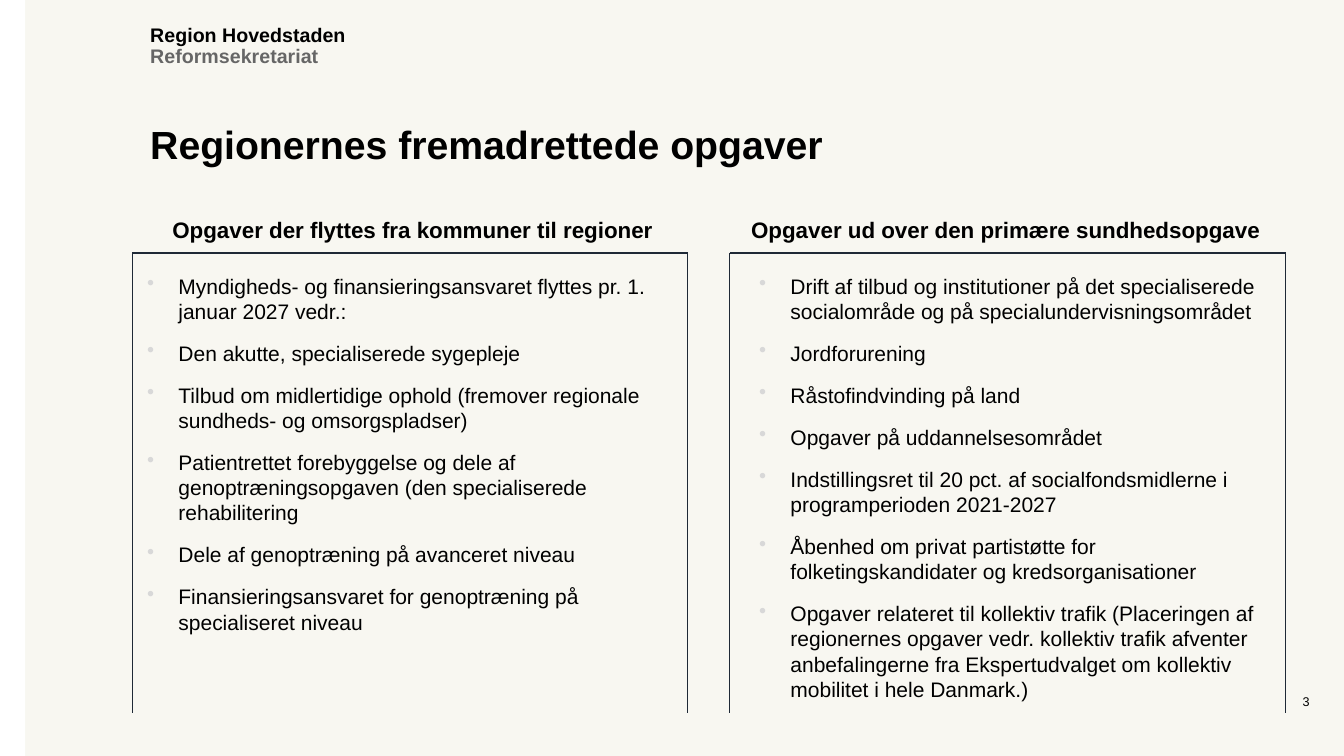
from dataclasses import dataclass

from lxml.etree import SubElement
from pptx import Presentation
from pptx.dml.color import RGBColor
from pptx.enum.shapes import MSO_CONNECTOR, MSO_SHAPE
from pptx.enum.text import MSO_ANCHOR, MSO_AUTO_SIZE, PP_ALIGN
from pptx.oxml.ns import qn
from pptx.util import Inches, Pt


@dataclass(frozen=True)
class Theme:
    font: str = "Arial"
    background: str = "F8F7F1"
    bar: str = "FFFFFF"
    text: str = "000000"
    muted: str = "666666"
    bullet: str = "D8D8D8"
    rule: str = "1F2936"
    title_size: float = 28
    heading_size: float = 16
    body_size: float = 15
    body_leading: float = 18
    header_size: float = 14
    number_size: float = 9


THEME = Theme()

MOVED_TASKS = [
    "Myndigheds- og finansieringsansvaret flyttes pr. 1. januar 2027 vedr.:",
    "Den akutte, specialiserede sygepleje",
    "Tilbud om midlertidige ophold (fremover regionale sundheds- og omsorgspladser)",
    "Patientrettet forebyggelse og dele af genoptræningsopgaven "
    "(den specialiserede rehabilitering",
    "Dele af genoptræning på avanceret niveau",
    "Finansieringsansvaret for genoptræning på specialiseret niveau",
]
OTHER_TASKS = [
    "Drift af tilbud og institutioner på det specialiserede socialområde "
    "og på specialundervisningsområdet",
    "Jordforurening",
    "Råstofindvinding på land",
    "Opgaver på uddannelsesområdet",
    "Indstillingsret til 20 pct. af socialfondsmidlerne i programperioden 2021-2027",
    "Åbenhed om privat partistøtte for folketingskandidater og kredsorganisationer",
    "Opgaver relateret til kollektiv trafik (Placeringen af regionernes opgaver "
    "vedr. kollektiv trafik afventer anbefalingerne fra Ekspertudvalget om "
    "kollektiv mobilitet i hele Danmark.)",
]


def color(value):
    return RGBColor.from_string(value)


def format_para(para, size, tone=THEME.text, bold=False):
    para.font.name = THEME.font
    para.font.size = Pt(size)
    para.font.bold = bold
    para.font.color.rgb = color(tone)


def clear_margins(frame):
    frame.margin_left = frame.margin_right = 0
    frame.margin_top = frame.margin_bottom = 0
    frame.word_wrap = True
    frame.auto_size = MSO_AUTO_SIZE.NONE


def add_text_frame(page, left, top, width, height):
    box = page.shapes.add_textbox(*map(Inches, (left, top, width, height)))
    clear_margins(box.text_frame)
    return box.text_frame


def add_label(page, text, left, top, width, height, size, **style):
    para = add_text_frame(page, left, top, width, height).paragraphs[0]
    para.text = text
    format_para(para, size, **style)
    return para


def add_bullet(para):
    properties = para._p.get_or_add_pPr()
    indent = Inches(0.31)
    properties.set("marL", str(indent))
    properties.set("indent", str(-indent))
    tint = SubElement(properties, qn("a:buClr"))
    SubElement(tint, qn("a:srgbClr"), val=THEME.bullet)
    SubElement(properties, qn("a:buChar"), char="•")


def add_rule(page, start, end):
    rule = page.shapes.add_connector(
        MSO_CONNECTOR.STRAIGHT, *map(Inches, (*start, *end)))
    rule.line.color.rgb = color(THEME.rule)
    rule.line.width = Pt(0.75)
    SubElement(rule._element.spPr, qn("a:effectLst"))


def add_open_frame(page, left, top, width, height):
    """Draw the top and the two sides of a box, leaving its foot open."""
    right, bottom = left + width, top + height
    add_rule(page, (left, top), (right, top))
    for side in (left, right):
        add_rule(page, (side, top), (side, bottom))


def add_task_column(page, box, heading, tasks, heading_inset, list_inset, list_width):
    left, top, width, height = box
    add_label(page, heading, left + heading_inset, top - 0.37,
              width - heading_inset, 0.31, THEME.heading_size, bold=True)
    add_open_frame(page, *box)
    frame = add_text_frame(page, left + list_inset, top + 0.2, list_width, height)
    for index, task in enumerate(tasks):
        para = frame.add_paragraph() if index else frame.paragraphs[0]
        para.text = task
        add_bullet(para)
        para.line_spacing = Pt(THEME.body_leading)
        para.space_after = Pt(12)
        format_para(para, THEME.body_size)


def add_side_bar(page, left, top, width, height):
    bar = page.shapes.add_shape(
        MSO_SHAPE.RECTANGLE, *map(Inches, (left, top, width, height)))
    bar.shadow.inherit = False
    bar.fill.solid()
    bar.fill.fore_color.rgb = color(THEME.bar)
    bar.line.fill.background()


def add_sender(page, left, top, width):
    lines = (("Region Hovedstaden", THEME.text), ("Reformsekretariat", THEME.muted))
    for index, (text, tone) in enumerate(lines):
        add_label(page, text, left, top + index * 0.21, width, 0.24,
                  THEME.header_size, tone=tone, bold=True)


def set_title(page, text, left, top, width, height):
    title = page.shapes.title
    title.left, title.top, title.width, title.height = map(
        Inches, (left, top, width, height))
    frame = title.text_frame
    clear_margins(frame)
    frame.vertical_anchor = MSO_ANCHOR.BOTTOM
    para = frame.paragraphs[0]
    para.text = text
    para.alignment = PP_ALIGN.LEFT
    para.line_spacing = 0.85
    format_para(para, THEME.title_size, bold=True)


def build_tasks_slide(deck):
    page = deck.slides.add_slide(deck.slide_layouts[5])
    page.background.fill.solid()
    page.background.fill.fore_color.rgb = color(THEME.background)
    add_side_bar(page, 0, 0, 0.25, 7.5)
    add_sender(page, 1.49, 0.23, 6.69)
    set_title(page, "Regionernes fremadrettede opgaver", 1.49, 0.76, 10.69, 0.9)
    add_task_column(page, (1.31, 2.51, 5.51, 4.56),
                    "Opgaver der flyttes fra kommuner til regioner", MOVED_TASKS,
                    heading_inset=0.4, list_inset=0.15, list_width=5.19)
    add_task_column(page, (7.24, 2.51, 5.51, 4.56),
                    "Opgaver ud over den primære sundhedsopgave", OTHER_TASKS,
                    heading_inset=0.21, list_inset=0.29, list_width=5.08)
    number = add_label(page, "3", 12.58, 6.88, 0.75, 0.2, THEME.number_size)
    number.alignment = PP_ALIGN.CENTER


def main():
    deck = Presentation()
    deck.slide_width, deck.slide_height = Inches(13.33), Inches(7.5)
    build_tasks_slide(deck)
    deck.save("out.pptx")


if __name__ == "__main__":
    main()
